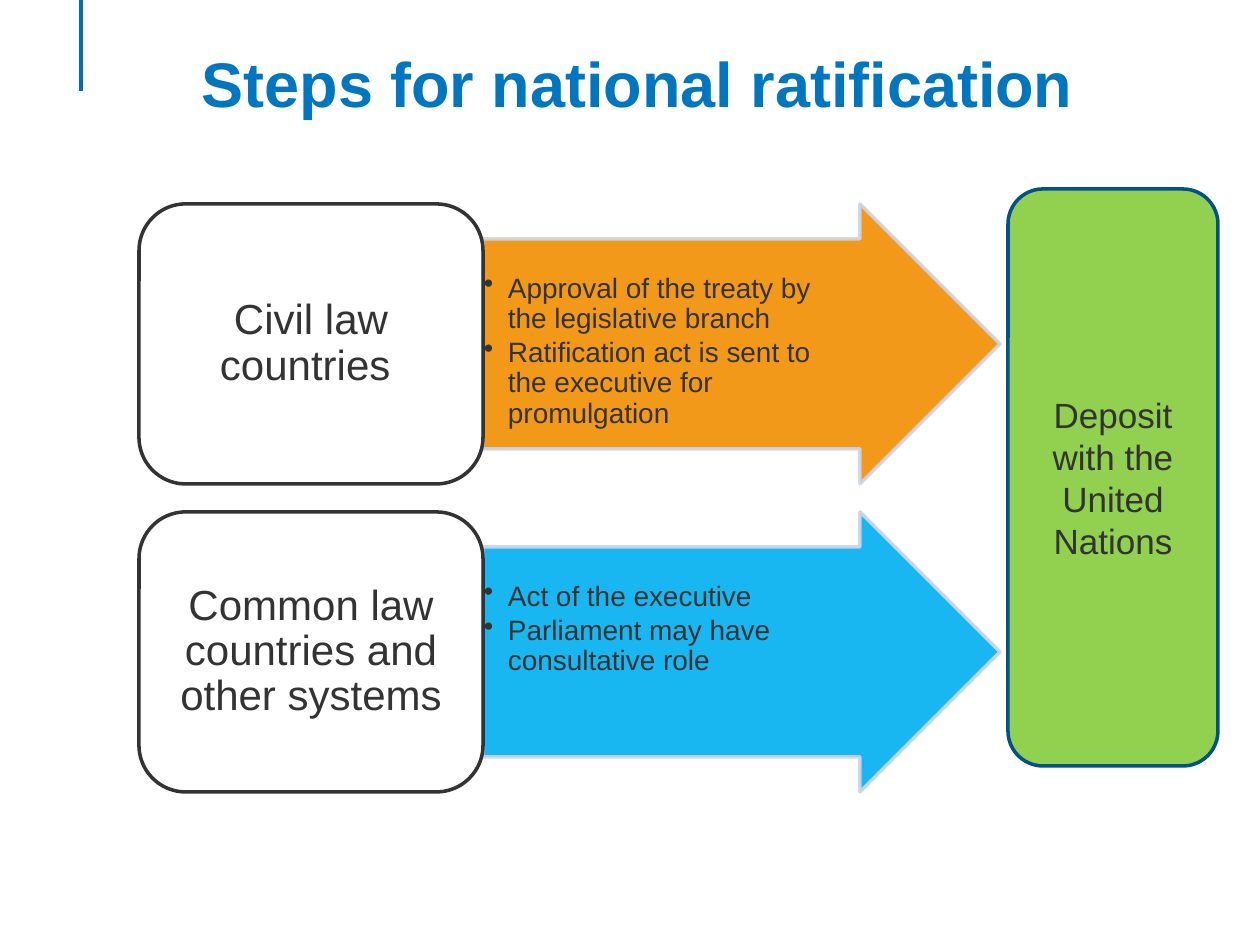
from dataclasses import dataclass

from lxml import etree
from pptx import Presentation
from pptx.dml.color import RGBColor
from pptx.enum.shapes import MSO_CONNECTOR, MSO_SHAPE
from pptx.enum.text import MSO_ANCHOR, PP_ALIGN
from pptx.oxml.ns import qn
from pptx.util import Emu, Pt

STRAIGHT = MSO_CONNECTOR.STRAIGHT
ARROW = MSO_SHAPE.RIGHT_ARROW
ROUNDED = MSO_SHAPE.ROUNDED_RECTANGLE
TOP, MIDDLE = MSO_ANCHOR.TOP, MSO_ANCHOR.MIDDLE
LEFT, CENTER = PP_ALIGN.LEFT, PP_ALIGN.CENTER
TITLE_ONLY = 5


@dataclass(frozen=True)
class Theme:
    font: str = "Arial"
    title: str = "0076C0"
    accent: str = "006FB7"
    text: str = "333333"
    civil: str = "F18E00"
    common: str = "00B0F0"
    arrow_line: str = "CCD5E6"
    deposit: str = "92D050"
    deposit_line: str = "005287"
    title_size: int = 36
    system_size: int = 24
    deposit_size: int = 20
    step_size: int = 16
    line_width: int = 2
    opacity: int = 90


def px(length):
    return Emu(round(length * 914400 / 126))


def write_text(shape, lines, size, color, font, bold=False, align=CENTER, anchor=MIDDLE,
               spacing=1.0, after=0, bullet_indent=0, insets=(13, 6, 13, 6)):
    frame = shape.text_frame
    frame.word_wrap = True
    frame.vertical_anchor = anchor
    frame.margin_left, frame.margin_top, frame.margin_right, frame.margin_bottom = map(px, insets)
    for index, line in enumerate(lines):
        paragraph = frame.add_paragraph() if index else frame.paragraphs[0]
        if bullet_indent:
            properties = paragraph._p.get_or_add_pPr()
            properties.set("marL", str(px(bullet_indent)))
            properties.set("indent", str(-px(bullet_indent)))
            etree.SubElement(properties, qn("a:buChar")).set("char", "•")
        paragraph.alignment = align
        paragraph.line_spacing = spacing
        paragraph.space_after = Pt(after)
        run = paragraph.add_run()
        run.text = line
        run.font.name = font
        run.font.size = Pt(size)
        run.font.bold = bold
        run.font.color.rgb = RGBColor.from_string(color)


class SlideBuilder:
    def __init__(self, slide, theme):
        self.slide = slide
        self.theme = theme

    def title(self, text, left, top, width, height):
        shape = self.slide.shapes.title
        shape.left, shape.top, shape.width, shape.height = map(px, (left, top, width, height))
        write_text(shape, [text], self.theme.title_size, self.theme.title, self.theme.font,
                   bold=True, anchor=TOP)

    def line(self, start, end, color):
        connector = self.slide.shapes.add_connector(STRAIGHT, *map(px, start + end))
        connector.line.color.rgb = RGBColor.from_string(color)
        connector.line.width = Pt(self.theme.line_width)
        etree.SubElement(connector._element.spPr, qn("a:effectLst"))

    def shape(self, kind, bounds, line, fill=None):
        shape = self.slide.shapes.add_shape(kind, *map(px, bounds))
        shape.shadow.inherit = False
        if fill:
            shape.fill.solid()
            shape.fill.fore_color.rgb = RGBColor.from_string(fill)
        else:
            shape.fill.background()
        shape.line.color.rgb = RGBColor.from_string(line)
        shape.line.width = Pt(self.theme.line_width)
        return shape

    def box(self, text, bounds, line, size, fill=None, **text_format):
        shape = self.shape(ROUNDED, bounds, line, fill)
        write_text(shape, [text], size, self.theme.text, self.theme.font, **text_format)

    def arrow(self, steps, bounds, fill):
        shape = self.shape(ARROW, bounds, self.theme.arrow_line, fill)
        shape.adjustments[0], shape.adjustments[1] = 0.75, 0.5
        for color in shape._element.spPr.iter(qn("a:srgbClr")):
            etree.SubElement(color, qn("a:alpha")).set("val", str(self.theme.opacity * 1000))
        write_text(shape, steps, self.theme.step_size, self.theme.text, self.theme.font,
                   align=LEFT, anchor=TOP, spacing=0.9, after=2.4, bullet_indent=24,
                   insets=(1, 35, 70, 1))


def main():
    theme = Theme()
    presentation = Presentation()
    presentation.slide_width, presentation.slide_height = px(1260), px(945)
    slide = presentation.slides.add_slide(presentation.slide_layouts[TITLE_ONLY])
    builder = SlideBuilder(slide, theme)

    builder.line((81, 0), (81, 91), theme.accent)
    builder.title("Steps for national ratification", 35, 38, 1205, 150)

    systems = [
        ("Civil law countries ", theme.civil,
         ["Approval of the treaty by the legislative branch",
          "Ratification act is sent to the executive for promulgation"]),
        ("Common law countries and other systems", theme.common,
         ["Act of the executive", "Parliament may have consultative role"]),
    ]
    first_top, height, gap = 204, 280, 28
    for index, (name, color, steps) in enumerate(systems):
        top = first_top + index * (height + gap)
        builder.arrow(steps, (483, top, 517, height), color)
        builder.box(name, (139, top, 344, height), theme.text, theme.system_size, spacing=0.9)

    builder.box("Deposit with the United Nations", (1008, 189, 210, 577), theme.deposit_line,
                theme.deposit_size, fill=theme.deposit)
    presentation.save("out.pptx")


if __name__ == "__main__":
    main()
